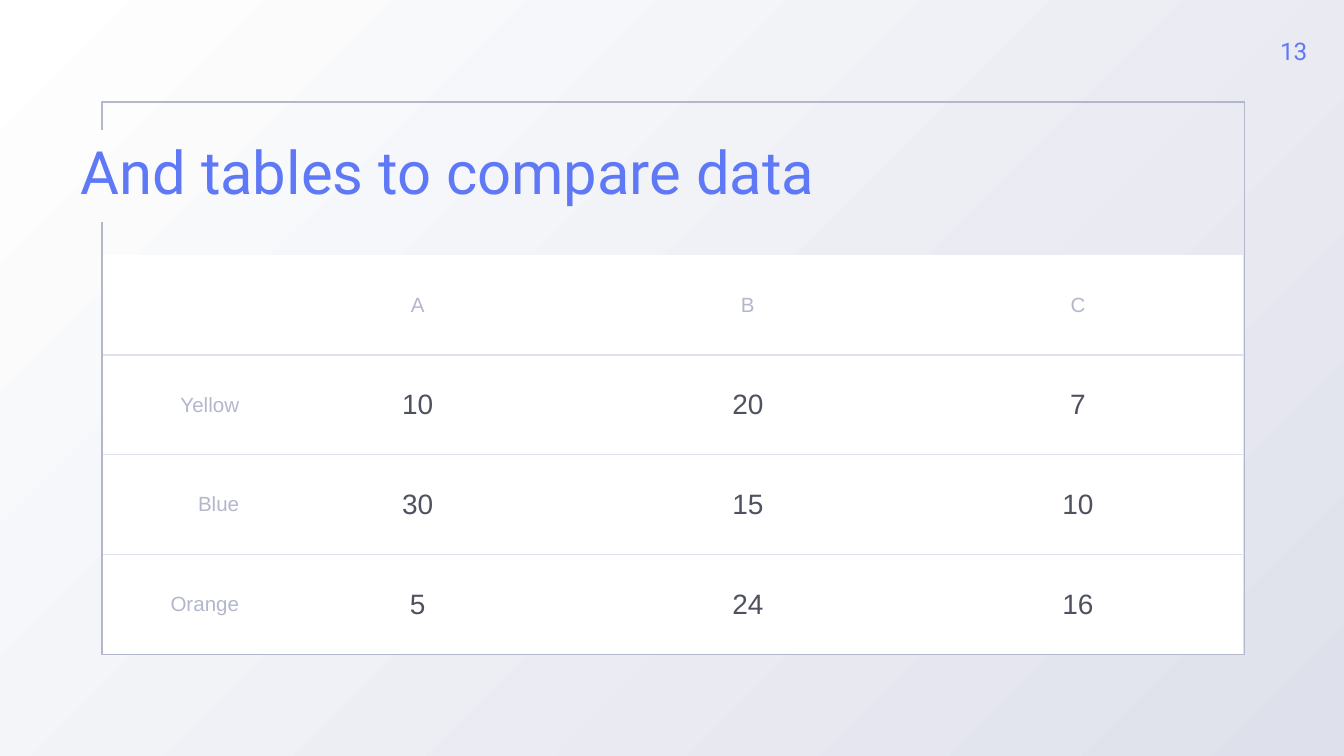
from lxml import etree
from pptx import Presentation
from pptx.dml.color import RGBColor
from pptx.enum.text import MSO_ANCHOR, PP_ALIGN
from pptx.oxml.ns import qn
from pptx.util import Inches, Pt

LEFT, CENTER, RIGHT = PP_ALIGN.LEFT, PP_ALIGN.CENTER, PP_ALIGN.RIGHT
MIDDLE = MSO_ANCHOR.MIDDLE
COLORS = {
    "accent": "5F79F6",
    "frame": "B3B7CC",
    "rule": "DEE0EB",
    "figure": "4E515E",
    "white": "FFFFFF",
}


def write(frame, text, size, font, color, align):
    """Put one formatted paragraph, vertically centred, in a text frame or cell."""
    frame.vertical_anchor = MIDDLE
    paragraph = getattr(frame, "text_frame", frame).paragraphs[0]
    if text:
        paragraph.text = text
    paragraph.alignment = align
    paragraph.font.size = Pt(size)
    paragraph.font.name = font
    paragraph.font.color.rgb = RGBColor.from_string(COLORS[color])
    return paragraph


def set_border(cell, side, color=None):
    """Draw one cell border (L, R, T or B), or hide it when no colour is given."""
    line = etree.SubElement(cell._tc.get_or_add_tcPr(), qn(f"a:ln{side}"), w=str(Pt(0.75)))
    if color:
        fill = etree.SubElement(line, qn("a:solidFill"))
        etree.SubElement(fill, qn("a:srgbClr"), val=COLORS[color])
    else:
        etree.SubElement(line, qn("a:noFill"))


prs = Presentation()
prs.slide_width, prs.slide_height = Inches(10), Inches(10 * 9 / 16)
slide = prs.slides.add_slide(prs.slide_layouts[5])

# Background
background = slide.background.fill
background.gradient()
background.gradient_angle = 315
for stop, color in zip(background.gradient_stops, ("white", "rule")):
    stop.color.rgb = RGBColor.from_string(COLORS[color])

# Frame, open on the left beside the title
corners = [(0.76, 0.97), (0.76, 0.76), (9.26, 0.76), (9.26, 4.87), (0.76, 4.87), (0.76, 1.65)]
points = [(Inches(x), Inches(y)) for x, y in corners]
builder = slide.shapes.build_freeform(*points[0])
builder.add_line_segments(points[1:], close=False)
border = builder.convert_to_shape()
border.shadow.inherit = False
border.fill.background()
border.line.color.rgb = RGBColor.from_string(COLORS["frame"])
border.line.width = Pt(0.75)

# Title and slide number
title = slide.shapes.title
title.left, title.top = Inches(0.6), Inches(0.96)
title.width, title.height = Inches(8.5), Inches(0.69)
number = slide.shapes.add_textbox(Inches(9.25), 0, Inches(0.75), Inches(0.75))
for shape in (title, number):
    frame = shape.text_frame
    frame.word_wrap = True
    frame.margin_left = frame.margin_right = frame.margin_top = frame.margin_bottom = 0
heading = write(title.text_frame, "And tables to compare data", 32, "Roboto", "accent", LEFT)
heading.line_spacing = 0.9
write(number.text_frame, "13", 13, "Roboto", "accent", CENTER)

# Comparison table
rows = [
    ["", "A", "B", "C"],
    ["Yellow", "10", "20", "7"],
    ["Blue", "30", "15", "10"],
    ["Orange", "5", "24", "16"],
]
table_width, table_height, label_width = 8.48, 2.97, 1.11
table = slide.shapes.add_table(
    len(rows), len(rows[0]), Inches(0.77), Inches(1.9),
    Inches(table_width), Inches(table_height),
).table
table.first_row = table.horz_banding = False
for c, column in enumerate(table.columns):
    column.width = Inches((table_width - label_width) / 3 if c else label_width)

for r, values in enumerate(rows):
    for c, value in enumerate(values):
        cell = table.cell(r, c)
        cell.margin_left = cell.margin_right = Inches(0.1)
        cell.margin_top = cell.margin_bottom = Inches(0.07)
        is_figure = r > 0 and c > 0
        write(cell, value, 15 if is_figure else 11, "Arial",
              "figure" if is_figure else "frame", CENTER if c else RIGHT)
        set_border(cell, "L")
        set_border(cell, "R")
        set_border(cell, "T", "rule" if r > 0 else None)
        set_border(cell, "B", "rule" if r < len(rows) - 1 else None)
        cell.fill.solid()
        cell.fill.fore_color.rgb = RGBColor.from_string(COLORS["white"])

prs.save("out.pptx")
